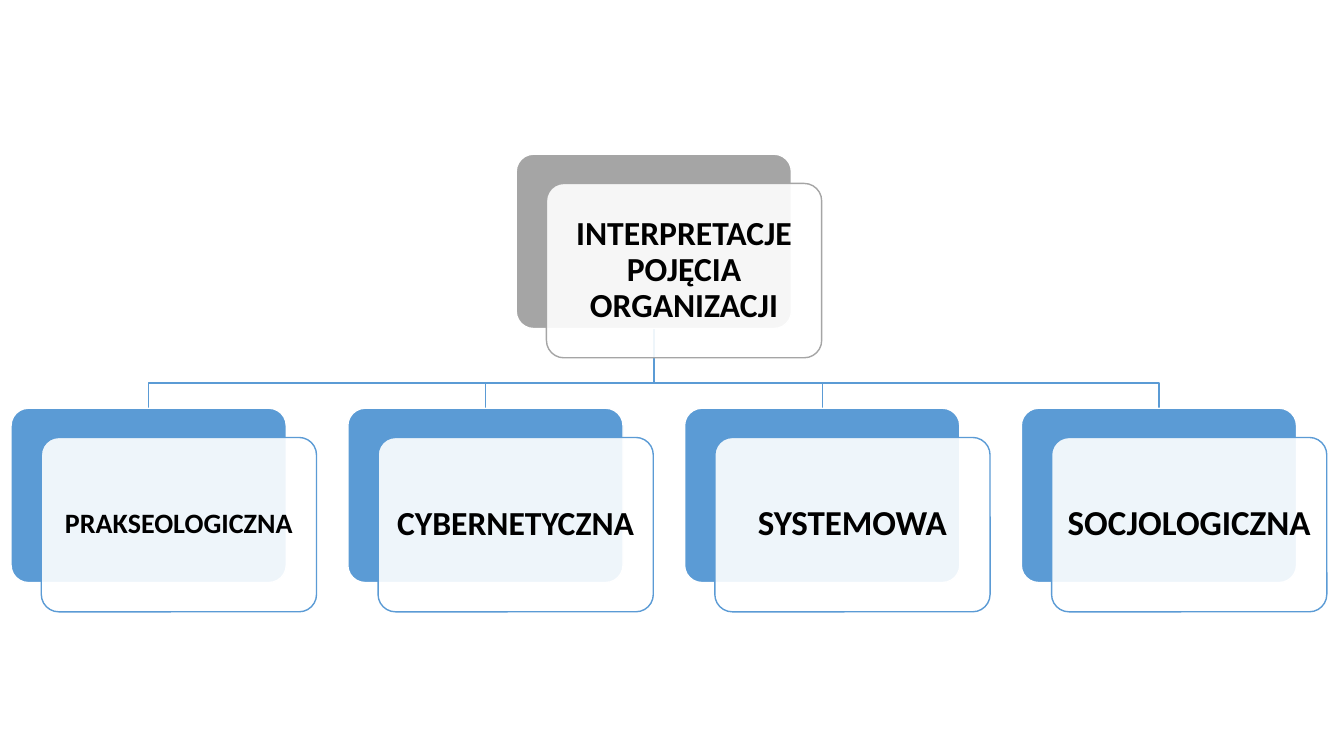
from dataclasses import dataclass

import pptx
import pptx.dml.color
import pptx.enum.shapes
import pptx.enum.text
import pptx.oxml
import pptx.oxml.ns
import pptx.util
from pptx.util import Inches

BLUE, GRAY, WHITE, BLACK = "5B9BD5", "A5A5A5", "FFFFFF", "000000"
CARD_WIDTH, CARD_HEIGHT = 2.73, 1.73
OFFSET_X, OFFSET_Y = 0.3, 0.29
ROW_LEFT, ROW_TOP, ROW_PITCH = 0.11, 4.05, 3.34
BRANCH_Y = 3.8


@dataclass
class Card:
    """A filled back plate with a translucent labelled plate in front."""
    label: str
    left: float
    top: float
    color: str
    size: int
    margin: float = 0.1

    @property
    def center(self) -> float:
        return self.left + CARD_WIDTH / 2


def rgb(color: str) -> pptx.dml.color.RGBColor:
    return pptx.dml.color.RGBColor.from_string(color)


def add_plate(slide, left: float, top: float, fill: str, line: str):
    plate = slide.shapes.add_shape(
        pptx.enum.shapes.MSO_SHAPE.ROUNDED_RECTANGLE,
        Inches(left), Inches(top), Inches(CARD_WIDTH), Inches(CARD_HEIGHT))
    plate.adjustments[0] = 0.1
    plate.shadow.inherit = False
    plate.fill.solid()
    plate.fill.fore_color.rgb = rgb(fill)
    plate.line.color.rgb = rgb(line)
    plate.line.width = pptx.util.Pt(1)
    return plate


def set_opacity(shape, percent: int) -> None:
    color = shape.fill._xPr.find(".//" + pptx.oxml.ns.qn("a:srgbClr"))
    alpha = pptx.oxml.parse_xml(
        f'<a:alpha {pptx.oxml.ns.nsdecls("a")} val="{percent * 1000}"/>')
    color.append(alpha)


def add_card(slide, card: Card) -> None:
    add_plate(slide, card.left, card.top, card.color, WHITE)
    front = add_plate(slide, card.left + OFFSET_X, card.top + OFFSET_Y,
                      WHITE, card.color)
    set_opacity(front, 90)
    frame = front.text_frame
    frame.word_wrap = True
    frame.vertical_anchor = pptx.enum.text.MSO_ANCHOR.MIDDLE
    frame.margin_left = frame.margin_right = Inches(card.margin)
    frame.margin_top = frame.margin_bottom = Inches(card.margin)
    frame.text = card.label
    paragraph = frame.paragraphs[0]
    paragraph.alignment = pptx.enum.text.PP_ALIGN.CENTER
    paragraph.line_spacing = 0.9
    paragraph.font.name = "Calibri"
    paragraph.font.size = pptx.util.Pt(card.size)
    paragraph.font.bold = True
    paragraph.font.color.rgb = rgb(BLACK)


def add_branch(slide, parent: Card, child: Card) -> None:
    start = (Inches(parent.center), Inches(parent.top + CARD_HEIGHT))
    corners = [(parent.center, BRANCH_Y), (child.center, BRANCH_Y),
               (child.center, child.top)]
    builder = slide.shapes.build_freeform(*start)
    builder.add_line_segments(
        [(Inches(x), Inches(y)) for x, y in corners], close=False)
    branch = builder.convert_to_shape()
    branch.shadow.inherit = False
    branch.fill.background()
    branch.line.color.rgb = rgb(BLUE)
    branch.line.width = pptx.util.Pt(1)


def main() -> None:
    presentation = pptx.Presentation()
    presentation.slide_width = Inches(13.33)
    presentation.slide_height = Inches(7.5)
    slide = presentation.slides.add_slide(presentation.slide_layouts[6])

    # Hierarchy content
    root = Card("INTERPRETACJE POJĘCIA ORGANIZACJI", 5.12, 1.53, GRAY, 24)
    interpretations = [("PRAKSEOLOGICZNA", 20, 0.08),
                       ("CYBERNETYCZNA", 24, 0.1),
                       ("SYSTEMOWA", 25, 0.1),
                       ("SOCJOLOGICZNA", 25, 0.1)]
    children = [
        Card(label, ROW_LEFT + index * ROW_PITCH, ROW_TOP, BLUE, size, margin)
        for index, (label, size, margin) in enumerate(interpretations)]

    # Branches lie behind the cards
    for child in reversed(children):
        add_branch(slide, root, child)
    for card in [root, *children]:
        add_card(slide, card)

    presentation.save("out.pptx")


if __name__ == "__main__":
    main()
